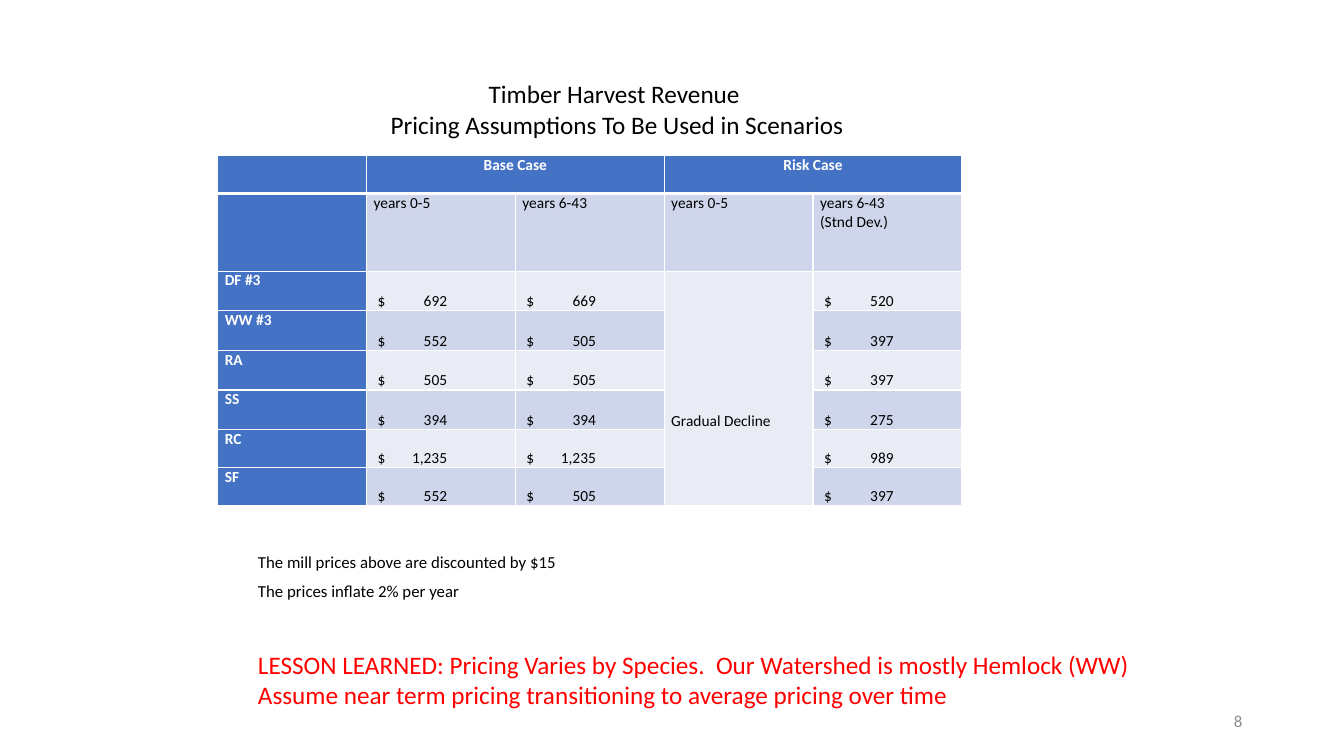
from lxml import etree
from pptx import Presentation
from pptx.dml.color import RGBColor
from pptx.enum.text import MSO_ANCHOR as Anchor, MSO_AUTO_SIZE as AutoSize, PP_ALIGN as Align
from pptx.oxml.ns import qn
from pptx.util import Inches, Pt

# Content
TITLE = ["Timber Harvest Revenue ", "Pricing Assumptions To Be Used in Scenarios"]
CASES = ["Base Case", "Risk Case"]
PERIODS = ["years 0-5", "years 6-43", "years 0-5", "years 6-43\n(Stnd Dev.)"]
RISK_TREND = "Gradual Decline"
PRICES = [  # species, base years 0-5, base years 6-43, risk years 6-43
    ("DF #3", 692, 669, 520),
    ("WW #3", 552, 505, 397),
    ("RA", 505, 505, 397),
    ("SS", 394, 394, 275),
    ("RC", 1235, 1235, 989),
    ("SF", 552, 505, 397),
]
NOTES = ["The mill prices above are discounted by $15", "The prices inflate 2% per year"]
LESSON = [
    "LESSON LEARNED: Pricing Varies by Species.  Our Watershed is mostly Hemlock (WW)",
    "Assume near term pricing transitioning to average pricing over time",
]
PAGE_NUMBER = "8"

COLORS = {"text": "000000", "white": "FFFFFF", "header": "4472C4", "dark_band": "CFD5EA",
          "light_band": "E9EBF5", "lesson": "FF0000", "page": "8C8C8C"}
FONT = "Calibri"
TABLE_BOX = (2.16, 1.54, 7.38, 3.48)
ROW_HEIGHTS = [0.38, 0.77, 0.39, 0.4, 0.39, 0.39, 0.38, 0.38]
COLUMN_COUNT = 5
TREND_COLUMN = 3


def color(name):
    return RGBColor.from_string(COLORS[name])


def write(frame, lines, size, ink="text", bold=False, align=Align.LEFT, before=0):
    frame.text = "\n".join(lines)
    for paragraph in frame.paragraphs:
        paragraph.alignment = align
        paragraph.space_before = Pt(before)
        font = paragraph.font
        font.name, font.size, font.bold = FONT, Pt(size), bold
        font.color.rgb = color(ink)


def place(shape, box):
    shape.left, shape.top, shape.width, shape.height = map(Inches, box)


def add_text(slide, box, lines, size, anchor=Anchor.TOP, **style):
    frame = slide.shapes.add_textbox(*map(Inches, box)).text_frame
    frame.word_wrap = True
    frame.vertical_anchor = anchor
    write(frame, lines, size, **style)


def set_borders(cell, row):
    properties = cell._tc.get_or_add_tcPr()
    widths = {"lnL": 1, "lnR": 1, "lnT": 3 if row == 1 else 1, "lnB": 3 if row == 0 else 1}
    for side, width in widths.items():
        line = etree.SubElement(properties, qn(f"a:{side}"), w=str(Pt(width)))
        fill = etree.SubElement(line, qn("a:solidFill"))
        etree.SubElement(fill, qn("a:srgbClr"), val=COLORS["white"])


def fill_cell(cell, text, align=Align.LEFT, anchor=Anchor.TOP, header=False):
    write(cell.text_frame, text.split("\n"), 11, "white" if header else "text", header, align)
    cell.vertical_anchor = anchor


def fill_price(cell, price):
    fill_cell(cell, f"$\t{price:,}", anchor=Anchor.BOTTOM)
    cell.margin_left = Inches(0.11)
    # Right tab stop lines up the amounts
    properties = cell.text_frame.paragraphs[0]._p.get_or_add_pPr()
    tabs = etree.Element(qn("a:tabLst"))
    etree.SubElement(tabs, qn("a:tab"), pos=str(Inches(0.69)), algn="r")
    properties.find(qn("a:defRPr")).addprevious(tabs)


def add_price_table(slide):
    table = slide.shapes.add_table(len(ROW_HEIGHTS), COLUMN_COUNT, *map(Inches, TABLE_BOX)).table
    table.first_col = True
    for column in table.columns:
        column.width = Inches(TABLE_BOX[2] / COLUMN_COUNT)

    # Fills, borders and margins
    for row, height in enumerate(ROW_HEIGHTS):
        table.rows[row].height = Inches(height)
        for column in range(COLUMN_COUNT):
            cell = table.cell(row, column)
            set_borders(cell, row)
            band = "dark_band" if row % 2 else "light_band"
            if row > 1 and column == TREND_COLUMN:
                band = "light_band"
            cell.fill.solid()
            cell.fill.fore_color.rgb = color("header" if row == 0 or column == 0 else band)
            cell.margin_left = cell.margin_right = Inches(0.07)
            cell.margin_top = cell.margin_bottom = 0

    # Headings
    for index, case in enumerate(CASES):
        first = 1 + 2 * index
        table.cell(0, first).merge(table.cell(0, first + 1))
        fill_cell(table.cell(0, first), case, align=Align.CENTER, header=True)
    for column, period in enumerate(PERIODS, 1):
        fill_cell(table.cell(1, column), period)

    # Prices by species
    for row, (species, *prices) in enumerate(PRICES, 2):
        fill_cell(table.cell(row, 0), species, header=True)
        for column, price in zip((1, 2, 4), prices):
            fill_price(table.cell(row, column), price)

    # Trend cell spans all species
    trend = table.cell(2, TREND_COLUMN)
    trend.merge(table.cell(len(ROW_HEIGHTS) - 1, TREND_COLUMN))
    fill_cell(trend, RISK_TREND, anchor=Anchor.BOTTOM)
    trend.margin_bottom = Inches(0.75)


def main():
    presentation = Presentation()
    presentation.slide_width, presentation.slide_height = Inches(13.33), Inches(7.5)
    slide = presentation.slides.add_slide(presentation.slide_layouts[5])

    # Title
    title = slide.shapes.title
    place(title, (3.75, 0.73, 4.74, 0.71))
    title.text_frame.auto_size = AutoSize.NONE
    title.text_frame.word_wrap = False
    title.text_frame.vertical_anchor = Anchor.TOP
    write(title.text_frame, TITLE, 18, align=Align.CENTER)

    add_price_table(slide)

    # Notes, lesson and page number
    add_text(slide, (2.46, 5.42, 5.07, 0.59), NOTES, 12, Anchor.MIDDLE, before=6)
    add_text(slide, (2.46, 6.39, 10.28, 0.71), LESSON, 18, ink="lesson")
    add_text(slide, (9.42, 6.95, 3, 0.4), [PAGE_NUMBER], 12, Anchor.MIDDLE,
             ink="page", align=Align.RIGHT)
    presentation.save("out.pptx")


if __name__ == "__main__":
    main()
